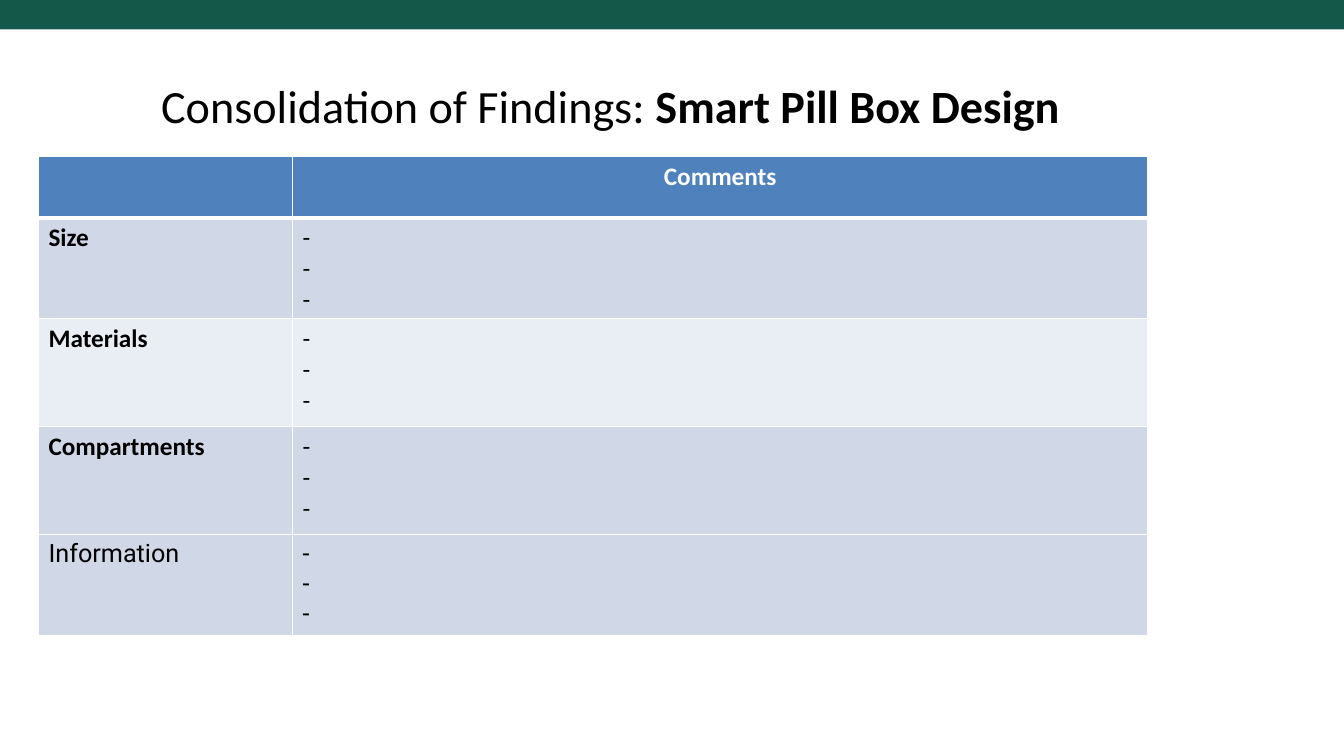
from dataclasses import dataclass

from lxml.etree import SubElement
from pptx import Presentation
from pptx.dml.color import RGBColor
from pptx.enum.shapes import MSO_SHAPE
from pptx.enum.text import MSO_ANCHOR, PP_ALIGN
from pptx.oxml.ns import qn
from pptx.util import Cm, Pt


@dataclass(frozen=True)
class Theme:
    band: str = "135848"
    header: str = "4F81BD"
    dark_row: str = "D0D8E8"
    light_row: str = "E9EDF4"
    ink: str = "000000"
    white: str = "FFFFFF"
    main_font: str = "Calibri"
    info_font: str = "Roboto"
    title_size: int = 33
    table_size: int = 18
    thin: int = 1
    thick: int = 3


THEME = Theme()
COLUMN_WIDTHS = (6.4, 21.56)
ROW_HEIGHTS = (1.55, 2.46, 2.72, 2.72, 2.54)
DASHES = ("-", "-", "-")

# Topic, row fill, font, bold topic
TOPICS = (
    ("Size", THEME.dark_row, THEME.main_font, True),
    ("Materials", THEME.light_row, THEME.main_font, True),
    ("Compartments", THEME.dark_row, THEME.main_font, True),
    ("Information", THEME.dark_row, THEME.info_font, False),
)


def apply_font(font, color=THEME.ink, **changes):
    values = {"name": THEME.main_font, "size": Pt(THEME.table_size), "bold": False}
    for attribute, value in (values | changes).items():
        setattr(font, attribute, value)
    font.color.rgb = RGBColor.from_string(color)


def add_band(slide, width):
    band = slide.shapes.add_shape(MSO_SHAPE.RECTANGLE, 0, 0, width, Cm(0.74))
    band.shadow.inherit = False
    band.fill.solid()
    band.fill.fore_color.rgb = RGBColor.from_string(THEME.band)
    band.line.fill.background()


def add_title(slide, parts):
    title = slide.shapes.add_textbox(Cm(3.81), Cm(1.9), Cm(26.67), Cm(1.68))
    frame = title.text_frame
    frame.word_wrap = True
    frame.vertical_anchor = MSO_ANCHOR.MIDDLE
    heading = frame.paragraphs[0]
    heading.line_spacing = 0.89
    for text, bold in parts:
        part = heading.add_run()
        part.text = text
        apply_font(part.font, size=Pt(THEME.title_size), bold=bold)


def set_borders(cell, top, bottom):
    properties = cell._tc.get_or_add_tcPr()
    widths = {"a:lnL": THEME.thin, "a:lnR": THEME.thin, "a:lnT": top, "a:lnB": bottom}
    for side, width in widths.items():
        border = SubElement(properties, qn(side), w=str(Pt(width)))
        paint = SubElement(border, qn("a:solidFill"))
        SubElement(paint, qn("a:srgbClr"), val=THEME.white)


def fill_cell(cell, lines, fill, align=PP_ALIGN.LEFT,
              top=THEME.thin, bottom=THEME.thin, **font_values):
    set_borders(cell, top, bottom)
    cell.fill.solid()
    cell.fill.fore_color.rgb = RGBColor.from_string(fill)
    cell.text = "\n".join(lines)
    for line in cell.text_frame.paragraphs:
        line.alignment = align
        apply_font(line.font, **font_values)
        for run in line.runs:
            apply_font(run.font, **font_values)


def add_findings(slide):
    findings = slide.shapes.add_table(
        len(ROW_HEIGHTS), len(COLUMN_WIDTHS), Cm(0.97), Cm(3.94),
        Cm(sum(COLUMN_WIDTHS)), Cm(sum(ROW_HEIGHTS))).table
    for column, width in zip(findings.columns, COLUMN_WIDTHS):
        column.width = Cm(width)
    for row, height in zip(findings.rows, ROW_HEIGHTS):
        row.height = Cm(height)

    # Header row
    for column, heading in enumerate(("", "Comments")):
        fill_cell(findings.cell(0, column), (heading,), THEME.header,
                  align=PP_ALIGN.CENTER, bottom=THEME.thick,
                  color=THEME.white, bold=True)

    # Topic rows
    for row, (topic, fill, font_name, bold) in enumerate(TOPICS, start=1):
        top = THEME.thick if row == 1 else THEME.thin
        fill_cell(findings.cell(row, 0), (topic,), fill, top=top,
                  name=font_name, bold=bold)
        fill_cell(findings.cell(row, 1), DASHES, fill, top=top, name=font_name)


def main():
    deck = Presentation()
    deck.slide_width, deck.slide_height = Cm(33.87), Cm(19.05)
    slide = deck.slides.add_slide(deck.slide_layouts[6])
    add_band(slide, deck.slide_width)
    add_title(slide, (("Consolidation of Findings: ", False),
                      ("Smart Pill Box Design", True)))
    add_findings(slide)
    deck.save("out.pptx")


if __name__ == "__main__":
    main()
